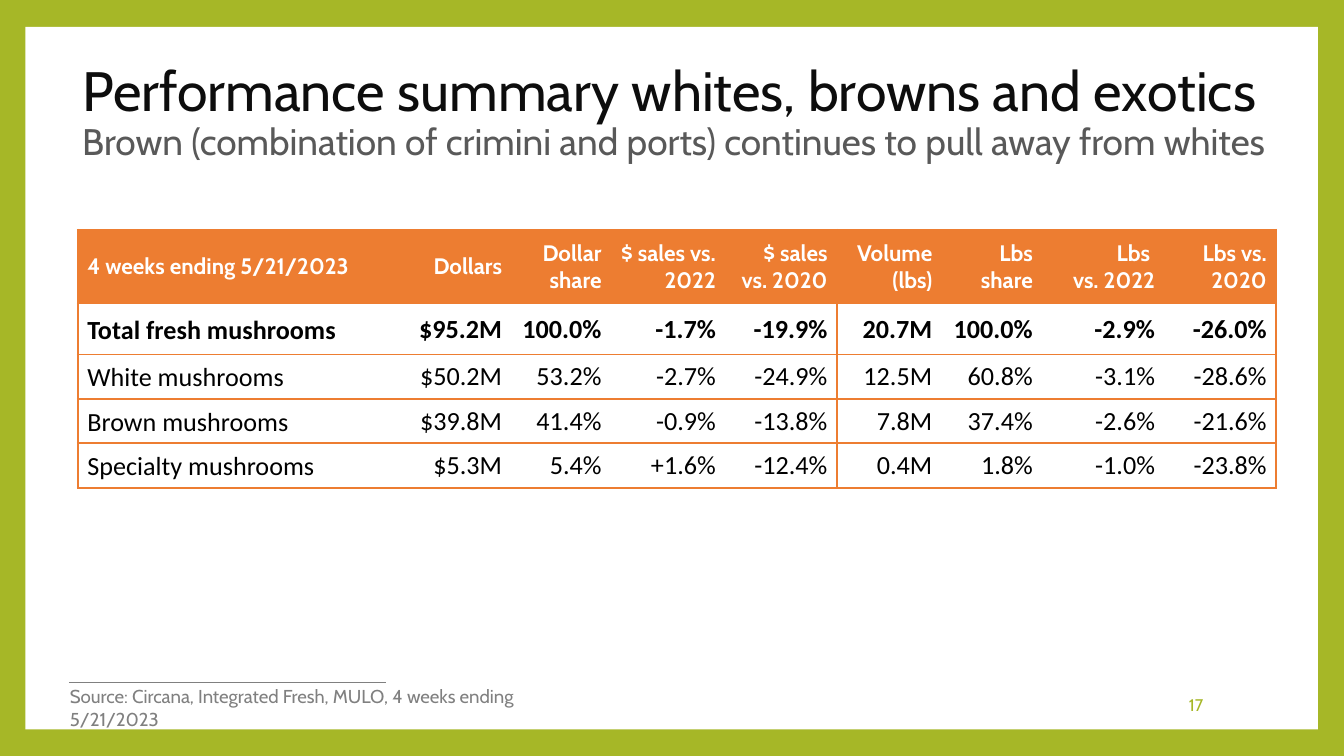
from copy import deepcopy
from lxml.etree import SubElement as Sub
from pptx import Presentation
from pptx.dml.color import RGBColor
from pptx.enum.shapes import MSO_CONNECTOR as Conn, MSO_SHAPE as Shape
from pptx.enum.text import MSO_ANCHOR as Anchor, MSO_AUTO_SIZE as Fit, PP_ALIGN as Align
from pptx.oxml.ns import qn
from pptx.util import Cm, Pt

GREEN, ORANGE, GREY = "A6B727", "ED7D31", "808080"
WIDTHS = [6.02, 2.18, 1.88, 2.16, 2.11, 1.98, 1.9, 2.31, 2.11]
HEIGHTS = [1.4, 0.96, 0.84, 0.84, 0.84]
# A newline starts a paragraph, a vertical tab breaks a line
ROWS = [
    ["4 weeks ending 5/21/2023", "Dollars", "Dollar share", "$ sales vs. 2022",
     "$ sales vs. 2020", "Volume (lbs)", "Lbs\nshare", "Lbs \vvs. 2022", "Lbs vs. 2020"],
    ["Total fresh mushrooms", "$95.2M", "100.0%", "-1.7%", "-19.9%",
     "20.7M", "100.0%", "-2.9%", "-26.0%"],
    ["White mushrooms", "$50.2M", "53.2%", "-2.7%", "-24.9%",
     "12.5M", "60.8%", "-3.1%", "-28.6%"],
    ["Brown mushrooms", "$39.8M", "41.4%", "-0.9%", "-13.8%",
     "7.8M", "37.4%", "-2.6%", "-21.6%"],
    ["Specialty mushrooms", "$5.3M", "5.4%", "+1.6%", "-12.4%",
     "0.4M", "1.8%", "-1.0%", "-23.8%"],
]


def paint(color, code):
    color.rgb = RGBColor.from_string(code)


def add_run(para, text, size, code, face="Cabin", bold=False):
    run = para.add_run()
    run.text = text
    font = run.font
    font.size, font.name, font.bold = Pt(size), face, bold
    paint(font.color, code)
    return run


def add_break(para, run):
    """Break the line, keeping the size of the run before."""
    para.add_line_break()
    para._p[-1].append(deepcopy(run._r.rPr))


def add_frame(slide):
    """White panel on green, with the rule above the source."""
    fill = slide.background.fill
    fill.solid()
    paint(fill.fore_color, GREEN)
    panel = slide.shapes.add_shape(Shape.RECTANGLE, Cm(0.48), Cm(0.51), Cm(24.43), Cm(13.28))
    panel.shadow.inherit = False
    panel.fill.solid()
    paint(panel.fill.fore_color, "FFFFFF")
    panel.line.fill.background()
    rule = slide.shapes.add_connector(Conn.STRAIGHT, Cm(1.3), Cm(12.9), Cm(7.29), Cm(12.9))
    paint(rule.line.color, GREY)
    rule.line.width = Pt(0.79)
    Sub(rule._element.spPr, qn("a:effectLst"))


def set_title(slide, head, sub):
    title = slide.shapes.title
    title.left, title.top, title.width, title.height = Cm(1.3), Cm(1.14), Cm(23.8), Cm(2.01)
    frame = title.text_frame
    frame.auto_size = Fit.NONE
    frame.word_wrap = True
    frame.vertical_anchor = Anchor.MIDDLE
    para = frame.paragraphs[0]
    para.alignment, para.line_spacing = Align.LEFT, 0.9
    add_break(para, add_run(para, head, 29.7, "0D0D0D"))
    add_run(para, sub, 19.8, "595959")


def add_note(slide, text, box, size, code, align, anchor):
    frame = slide.shapes.add_textbox(*map(Cm, box)).text_frame
    frame.word_wrap = True
    frame.vertical_anchor = anchor
    para = frame.paragraphs[0]
    para.alignment = align
    add_run(para, text, size, code)


def set_edge(cell, side, shown):
    line = Sub(cell._tc.get_or_add_tcPr(), qn("a:ln" + side), w=str(Pt(1)))
    if shown:
        fill = Sub(line, qn("a:solidFill"))
        Sub(fill, qn("a:srgbClr"), val=ORANGE)
    else:
        Sub(line, qn("a:noFill"))


def fill_cell(cell, text, row, col):
    head = row == 0
    cell.vertical_anchor = Anchor.MIDDLE
    cell.margin_left = cell.margin_right = Cm(0.18)
    cell.margin_top = cell.margin_bottom = 0
    # Outer box, row rules and the split between dollars and volume
    for side, shown in (("L", col in (0, 5)), ("R", col in (4, 8)), ("T", True), ("B", True)):
        set_edge(cell, side, shown)
    if head:
        cell.fill.solid()
        paint(cell.fill.fore_color, ORANGE)
    else:
        cell.fill.background()
    style = (12, "FFFFFF", "Cabin", True) if head else (14, "000000", "Calibri", row == 1)
    frame = cell.text_frame
    for num, part in enumerate(text.split("\n")):
        para = frame.add_paragraph() if num else frame.paragraphs[0]
        para.alignment = Align.RIGHT if col else Align.LEFT
        if not head and col == 0:
            para.line_spacing = 1.07
        run = None
        for line in part.split("\v"):
            if run:
                add_break(para, run)
            run = add_run(para, line, *style)


def add_grid(slide):
    grid = slide.shapes.add_table(len(ROWS), len(WIDTHS), Cm(1.47), Cm(4.34),
                                  Cm(sum(WIDTHS)), Cm(sum(HEIGHTS))).table
    grid.horz_banding = False
    for col, width in zip(grid.columns, WIDTHS):
        col.width = Cm(width)
    for row, height in zip(grid.rows, HEIGHTS):
        row.height = Cm(height)
    for r, texts in enumerate(ROWS):
        for c, text in enumerate(texts):
            fill_cell(grid.cell(r, c), text, r, c)


def main():
    deck = Presentation()
    deck.slide_width, deck.slide_height = Cm(25.4), Cm(14.29)
    slide = deck.slides.add_slide(deck.slide_layouts[5])
    add_frame(slide)
    # Bring the title in front of the panel
    tree = slide.shapes._spTree
    tree.append(slide.shapes.title._element)
    set_title(slide, "Performance summary whites, browns and exotics",
              "Brown (combination of crimini and ports) continues to pull away from whites")
    # Page number and source
    add_note(slide, "17", (19.43, 12.95, 3.56, 0.76), 9, GREEN, Align.RIGHT, Anchor.MIDDLE)
    add_note(slide, "Source: Circana, Integrated Fresh, MULO, 4 weeks ending 5/21/2023",
             (1.07, 12.83, 10.49, 0.69), 10, GREY, Align.LEFT, Anchor.TOP)
    add_grid(slide)
    deck.save("out.pptx")


if __name__ == "__main__":
    main()
